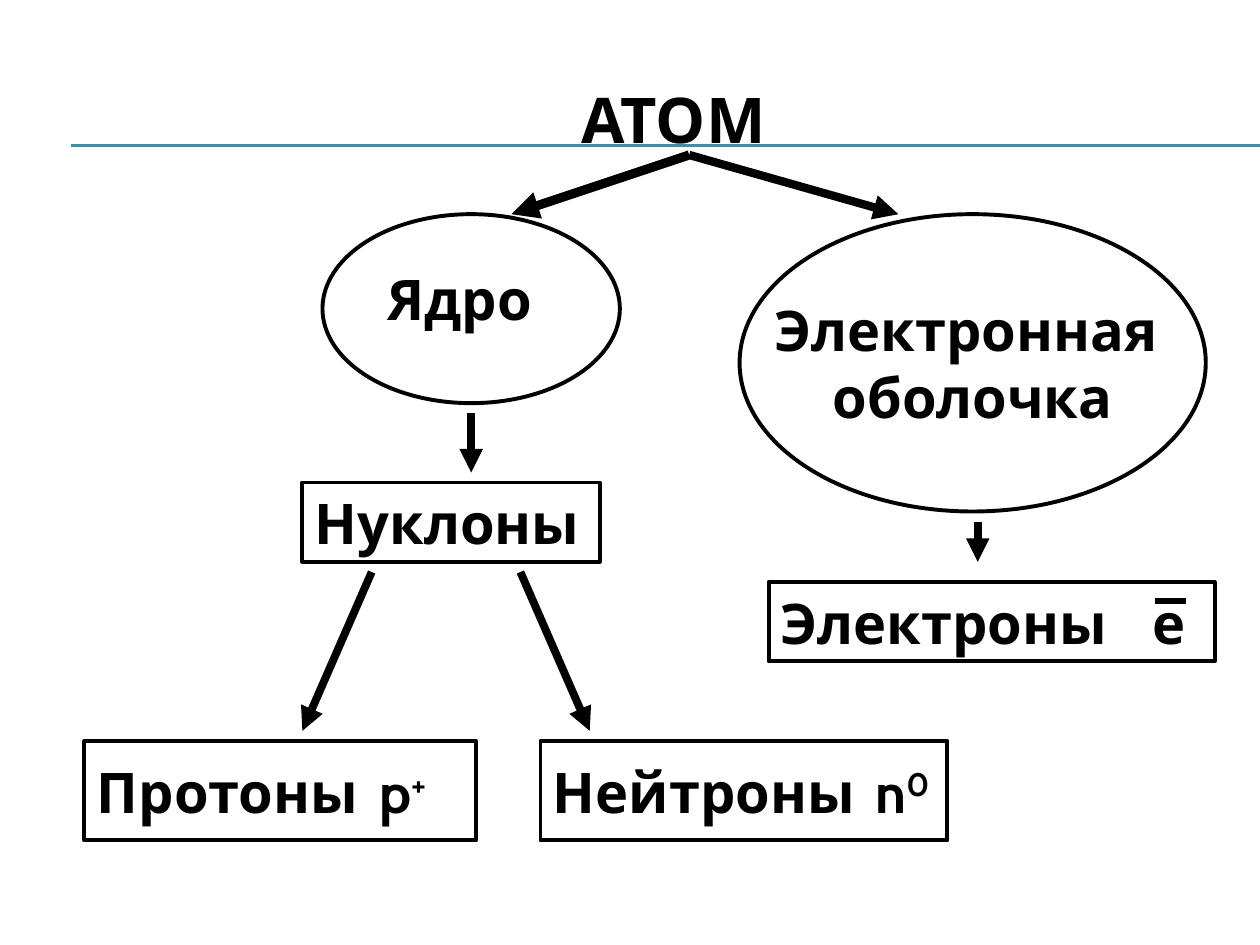
"""Build a slide with a diagram of the structure of the atom."""
from dataclasses import dataclass
from typing import Optional

from lxml import etree
from pptx import Presentation
from pptx import util as u
from pptx.dml.color import RGBColor
from pptx.enum import shapes, text
from pptx.oxml import ns

FONT = "Cabin"
BLACK = "000000"
TEAL = "3891A7"
OVAL = shapes.MSO_SHAPE.OVAL
RECTANGLE = shapes.MSO_SHAPE.RECTANGLE


@dataclass(frozen=True)
class Node:
    left: float
    top: float
    width: float
    height: float
    label: str = ""
    kind: shapes.MSO_SHAPE = RECTANGLE
    symbol: str = ""
    superscript: str = ""
    tab: float = 0
    centered: bool = False
    outlined: bool = True


@dataclass(frozen=True)
class Line:
    start: tuple[float, float]
    end: tuple[float, float]
    width: float = 4.5
    color: str = BLACK
    arrow: bool = True


RULES = [Line((0.56, y), (10, y), 0.75, TEAL, False) for y in (1.15, 1.16)]

NODES = [
    Node(2.64, 1.62, 2.28, 1.5, "Ядро", OVAL, outlined=False),
    Node(2.56, 1.7, 2.36, 1.5, kind=OVAL),
    Node(5.87, 1.7, 3.7, 2.36, "Электронная \nоболочка", OVAL, centered=True),
    Node(2.4, 3.83, 2.36, 0.63, "Нуклоны"),
    Node(0.67, 5.88, 3.11, 0.79, "Протоны", symbol="p", superscript="+", tab=2.24),
    Node(4.29, 5.88, 3.23, 0.79, "Нейтроны", symbol="n", superscript="0", tab=2.56),
    Node(6.1, 4.62, 3.54, 0.63, "Электроны", symbol="е", tab=2.95),
]

LINES = [
    Line((5.47, 1.23), (4.06, 1.7), 5.25),
    Line((5.47, 1.23), (7.13, 1.7), 4.75),
    Line((3.74, 3.28), (3.74, 3.75)),
    Line((2.95, 4.54), (2.4, 5.8)),
    Line((4.13, 4.54), (4.68, 5.8)),
    Line((7.76, 4.14), (7.76, 4.46)),
    Line((9.17, 4.77), (9.41, 4.77), 3.75, arrow=False),
]


def rgb(color: str) -> RGBColor:
    return RGBColor.from_string(color)


def add_run(paragraph, content: str, *, size: float = 32, raised: bool = False) -> None:
    run = paragraph.add_run()
    run.text = content
    run.font.name = FONT
    run.font.size = u.Pt(size)
    run.font.bold = True
    run.font.color.rgb = rgb(BLACK)
    if raised:
        run.font._element.set("baseline", "30000")


def add_tab_stop(paragraph, position: float) -> None:
    properties = paragraph._p.get_or_add_pPr()
    stops = etree.SubElement(properties, ns.qn("a:tabLst"))
    etree.SubElement(stops, ns.qn("a:tab"), pos=str(u.Inches(position)), algn="l")


def draw_title(slide, content: str) -> None:
    box = slide.shapes.add_textbox(
        u.Inches(0.69), u.Inches(0.21), u.Inches(9.31), u.Inches(1.45)
    )
    frame = box.text_frame
    frame.word_wrap = True
    frame.vertical_anchor = text.MSO_ANCHOR.MIDDLE
    paragraph = frame.paragraphs[0]
    paragraph.alignment = text.PP_ALIGN.CENTER
    add_run(paragraph, content, size=36)


def draw_node(slide, node: Node) -> None:
    shape = slide.shapes.add_shape(
        node.kind,
        u.Inches(node.left),
        u.Inches(node.top),
        u.Inches(node.width),
        u.Inches(node.height),
    )
    shape.shadow.inherit = False
    shape.fill.background()
    if node.outlined:
        shape.line.color.rgb = rgb(BLACK)
        shape.line.width = u.Pt(2.25)
    else:
        shape.line.fill.background()
    if node.label:
        write_label(shape.text_frame, node)


def write_label(frame, node: Node) -> None:
    frame.word_wrap = False
    frame.vertical_anchor = text.MSO_ANCHOR.MIDDLE
    for index, content in enumerate(node.label.split("\n")):
        paragraph = frame.add_paragraph() if index else frame.paragraphs[0]
        paragraph.alignment = (
            text.PP_ALIGN.CENTER if node.centered else text.PP_ALIGN.LEFT
        )
        if node.symbol:
            add_tab_stop(paragraph, node.tab)
            content = f"{content}\t{node.symbol}"
        add_run(paragraph, content)
        if node.superscript:
            add_run(paragraph, node.superscript, raised=True)


def draw_line(slide, line: Line) -> None:
    connector = slide.shapes.add_connector(
        shapes.MSO_CONNECTOR.STRAIGHT,
        *(u.Inches(value) for value in line.start + line.end),
    )
    connector.line.color.rgb = rgb(line.color)
    connector.line.width = u.Pt(line.width)
    if line.arrow:
        outline = connector.line._get_or_add_ln()
        etree.SubElement(outline, ns.qn("a:tailEnd"), type="triangle")
    properties: Optional[etree._Element] = connector._element.spPr
    etree.SubElement(properties, ns.qn("a:effectLst"))


def main() -> None:
    presentation = Presentation()
    presentation.slide_width = u.Inches(10)
    presentation.slide_height = u.Inches(7.5)
    slide = presentation.slides.add_slide(presentation.slide_layouts[6])
    for rule in RULES:
        draw_line(slide, rule)
    draw_title(slide, "АТОМ")
    for node in NODES:
        draw_node(slide, node)
    for line in LINES:
        draw_line(slide, line)
    presentation.save("out.pptx")


if __name__ == "__main__":
    main()
